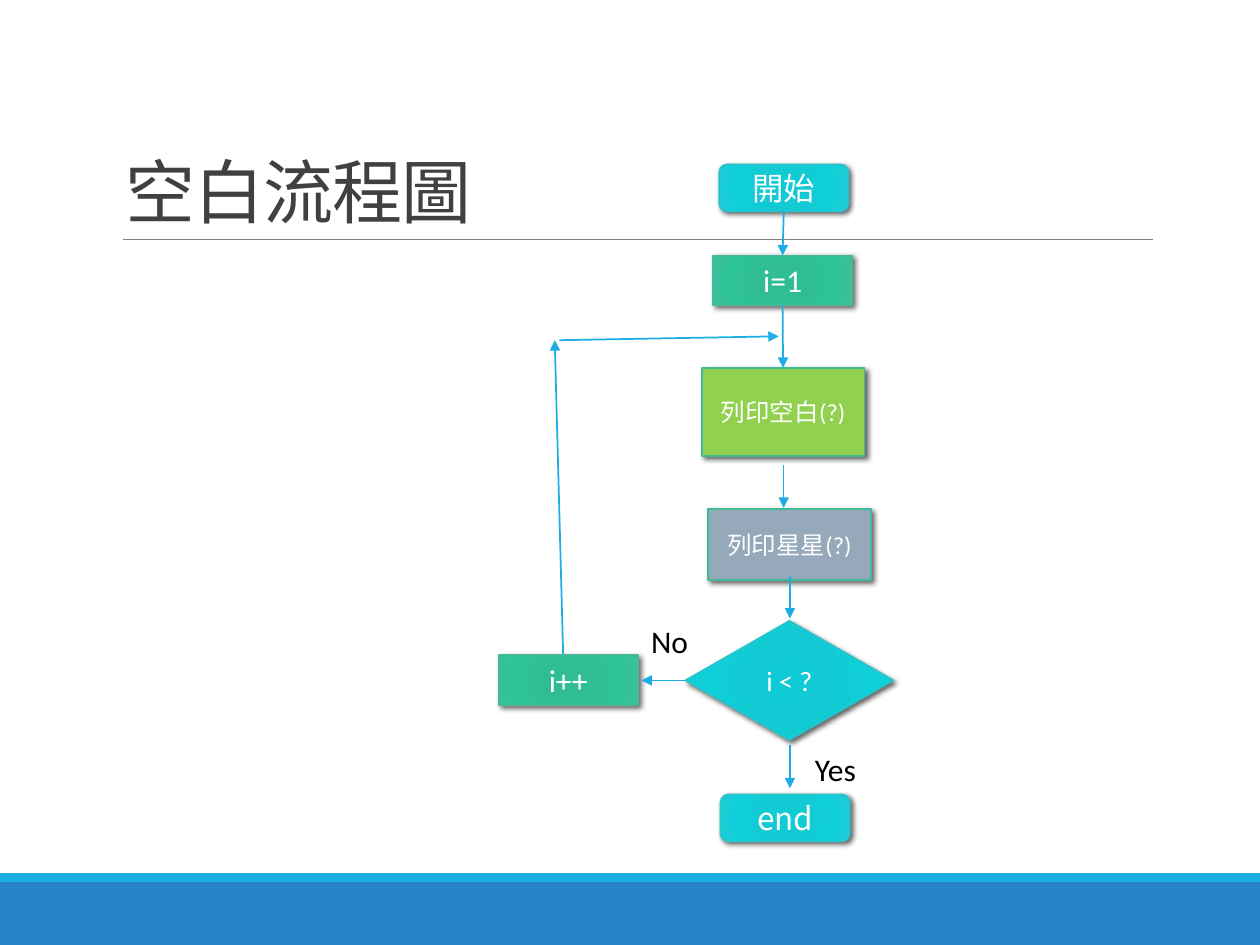
from lxml.etree import SubElement
from pptx import Presentation
from pptx.dml.color import RGBColor
from pptx.enum.shapes import MSO_CONNECTOR, MSO_SHAPE
from pptx.enum.text import MSO_ANCHOR, PP_ALIGN
from pptx.oxml import parse_xml
from pptx.oxml.ns import nsdecls, qn
from pptx.util import Pt

WHITE = RGBColor(0xFF, 0xFF, 0xFF)
BLACK = RGBColor(0, 0, 0)
DARK = RGBColor(0x40, 0x40, 0x40)
GRAY = RGBColor(0x80, 0x80, 0x80)
BLUE = RGBColor(0x26, 0x83, 0xC6)
SKY = RGBColor(0x1C, 0xAD, 0xE4)
LIME = RGBColor(0x92, 0xD0, 0x50)
SLATE = RGBColor(0x96, 0xA9, 0xBA)
TEAL = RGBColor(0x28, 0xC4, 0xCC)
GREEN = RGBColor(0x42, 0xBA, 0x97)

# Gradient colours, from the centre outwards
STOPS = (0, 34, 70, 100)
AQUA = [RGBColor.from_string(c) for c in ("0ECBD5", "12CAD3", "0FD0DA", "20CBD4")]
MINT = [RGBColor.from_string(c) for c in ("2DBE94", "30BD94", "2EC397", "3CC09A")]

LATIN = "Calibri"
CJK = "Noto Sans CJK SC"


def set_all(obj, vals):
    for key, val in vals.items():
        setattr(obj, key, val)


def write(shape, text, size, color, face=LATIN, align=PP_ALIGN.LEFT, **frame):
    box = shape.text_frame
    set_all(box, frame)
    par = box.paragraphs[0]
    par.alignment = align
    run = par.add_run()
    run.text = text
    set_all(run.font, {"size": Pt(size), "name": face})
    run.font.color.rgb = color
    SubElement(run.font._element, qn("a:ea"), typeface=CJK)
    return par, run


def shade(shape, colors):
    """Fill a shape with a radial gradient."""
    stops = "".join(
        f'<a:gs pos="{pos * 1000}"><a:srgbClr val="{color}"/></a:gs>'
        for pos, color in zip(STOPS, colors))
    grad = parse_xml(
        f'<a:gradFill {nsdecls("a")} rotWithShape="1"><a:gsLst>{stops}</a:gsLst>'
        '<a:path path="circle"><a:fillToRect l="100000" t="100000" '
        'r="100000" b="100000"/></a:path></a:gradFill>')
    props = shape._element.spPr
    props.replace(props.find(qn("a:solidFill")), grad)


def drop(shape):
    """Cast a soft shadow to the lower right."""
    glow = shape._element.spPr.find(qn("a:effectLst"))
    glow.append(parse_xml(
        f'<a:outerShdw {nsdecls("a")} blurRad="{Pt(3)}" dist="{Pt(2)}" '
        'dir="2700000" algn="tl" rotWithShape="0"><a:srgbClr val="000000">'
        '<a:alpha val="60000"/></a:srgbClr></a:outerShdw>'))


def add_bar(slide, top, height, color):
    bar = slide.shapes.add_shape(
        MSO_SHAPE.RECTANGLE, 0, Pt(top), Pt(720), Pt(height))
    bar.shadow.inherit = False
    bar.fill.solid()
    bar.fill.fore_color.rgb = color
    bar.line.fill.background()


def add_node(slide, kind, place, fill, edge, text, size, face=LATIN):
    node = slide.shapes.add_shape(kind, *map(Pt, place))
    node.shadow.inherit = False
    node.fill.solid()
    if isinstance(fill, list):
        shade(node, fill)
    else:
        node.fill.fore_color.rgb = fill
    node.line.color.rgb = edge
    node.line.width = Pt(1)
    drop(node)
    write(node, text, size, WHITE, face, PP_ALIGN.CENTER,
          vertical_anchor=MSO_ANCHOR.MIDDLE, word_wrap=True)
    return node


def add_line(slide, start, end, color=SKY, width=1, arrow=True):
    line = slide.shapes.add_connector(
        MSO_CONNECTOR.STRAIGHT, *map(Pt, (*start, *end)))
    line.line.color.rgb = color
    line.line.width = Pt(width)
    if arrow:
        SubElement(line.line._get_or_add_ln(), qn("a:tailEnd"), type="triangle")
    SubElement(line._element.spPr, qn("a:effectLst"))
    return line


def add_label(slide, place, text):
    label = slide.shapes.add_textbox(*map(Pt, place))
    write(label, text, 18, BLACK, word_wrap=False)


def main():
    deck = Presentation()
    set_all(deck, {"slide_width": Pt(720), "slide_height": Pt(540)})
    slide = deck.slides.add_slide(deck.slide_layouts[6])

    # Footer bars and title rule
    add_bar(slide, 504, 36, BLUE)
    add_bar(slide, 499, 5, SKY)
    add_line(slide, (70.5, 136.8), (658.8, 136.8), GRAY, 0.5, arrow=False)

    # Title
    title = slide.shapes.add_textbox(Pt(64.8), Pt(22.3), Pt(594), Pt(114.5))
    par, run = write(title, "空白流程圖", 40, DARK, CJK, word_wrap=True,
                     vertical_anchor=MSO_ANCHOR.BOTTOM)
    par.line_spacing = 0.85
    run.font._element.set("spc", "-50")

    # Flowchart nodes
    rect, pill = MSO_SHAPE.RECTANGLE, MSO_SHAPE.ROUNDED_RECTANGLE
    start = add_node(slide, pill, (411, 94, 73.8, 26.8), AQUA, TEAL, "開始", 18, CJK)
    init = add_node(slide, rect, (407.5, 146, 79.4, 28.4), MINT, GREEN, "i=1", 18)
    add_node(slide, rect, (285, 374.5, 79.4, 28.4), MINT, GREEN, "i++", 18)
    test = add_node(slide, MSO_SHAPE.DIAMOND, (391.7, 354.8, 118.8, 68),
                    AQUA, TEAL, "i < ?", 16)
    blank = add_node(slide, rect, (401, 210.2, 93, 50.2), LIME, GREEN,
                     "列印空白(?)", 14)
    add_node(slide, rect, (404.6, 291, 93, 40.4), SLATE, GREEN, "列印星星(?)", 14)
    add_node(slide, pill, (411.8, 454, 73.8, 26.8), AQUA, TEAL, "end", 18, CJK)

    # Joined arrows
    for head, foot in ((start, init), (init, blank)):
        link = add_line(slide, (0, 0), (0, 0))
        link.begin_connect(head, 2)
        link.end_connect(foot, 0)
    back = add_line(slide, (391.7, 388.8), (366.5, 388.8))
    back.begin_connect(test, 1)

    # Free arrows: downward steps, then the loop
    for x, top, low in ((447.8, 265.7, 290.2), (451.4, 329, 353.5),
                        (451.4, 425.5, 450.5)):
        add_line(slide, (x, top), (x, low))
    add_line(slide, (321.8, 373.7), (317, 194.4))
    add_line(slide, (319.7, 194.4), (445, 192.2))

    # Branch labels
    add_label(slide, (458.6, 424.8, 38.2, 29), "Yes")
    add_label(slide, (365, 352, 36, 29), "No")

    deck.save("out.pptx")


if __name__ == "__main__":
    main()
